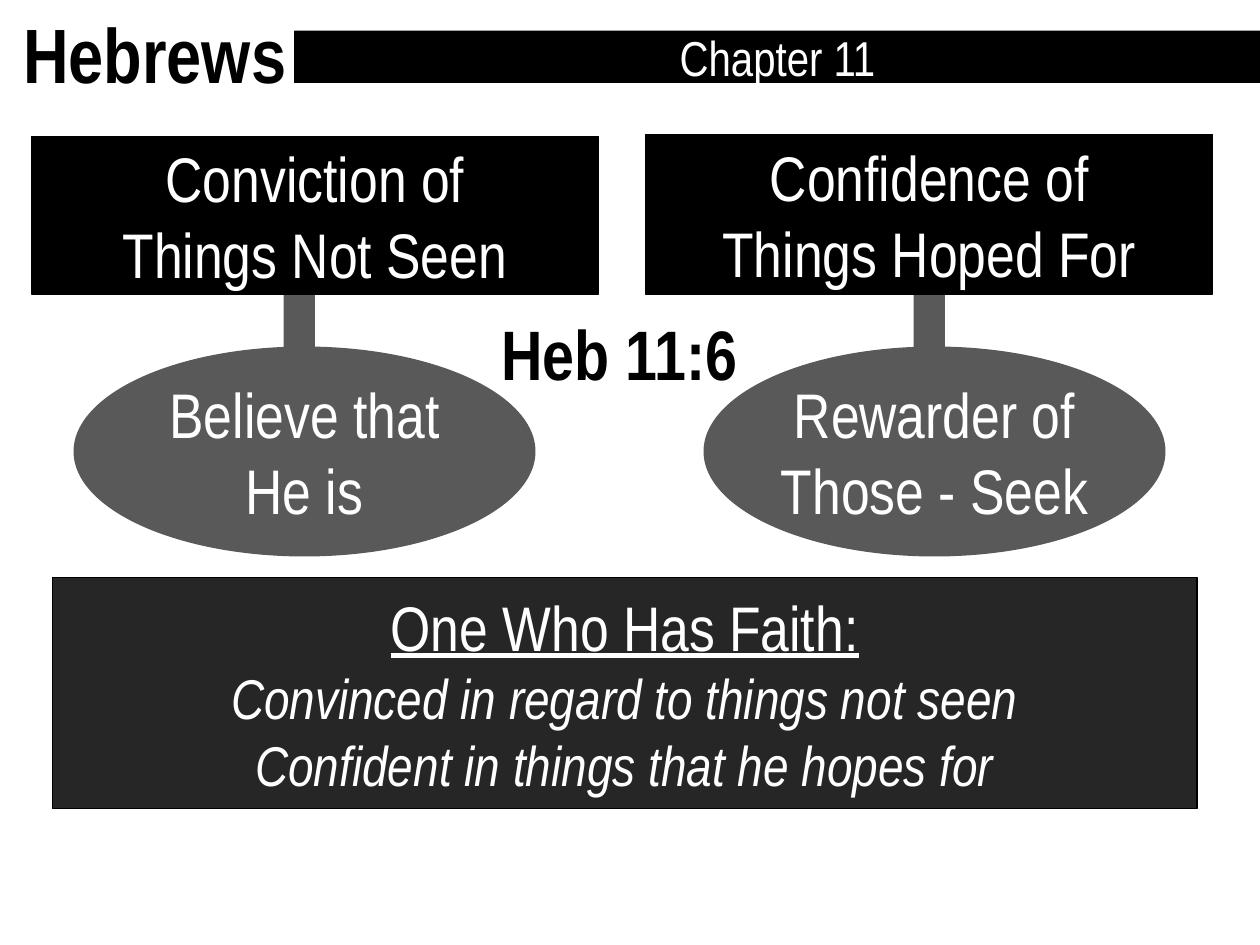
from dataclasses import dataclass

from pptx import Presentation
from pptx.dml.color import RGBColor
from pptx.enum import shapes, text
from pptx.util import Pt

RECT = shapes.MSO_SHAPE.RECTANGLE
OVAL = shapes.MSO_SHAPE.OVAL
LEFT, MID = text.PP_ALIGN.LEFT, text.PP_ALIGN.CENTER


@dataclass
class Theme:
    font: str = "Arial Narrow"
    black: str = "000000"
    white: str = "FFFFFF"
    gray: str = "595959"
    dark: str = "262626"
    title: int = 44
    verse: int = 40
    head: int = 36
    body: int = 32
    bar: int = 28


def write(para, words, size, color, face, align=MID, **marks):
    """Put words in a paragraph; marks are bold, italic or underline."""
    para.alignment = align
    run = para.add_run()
    run.text = words
    run.font.name, run.font.size = face, Pt(size)
    run.font.color.rgb = RGBColor.from_string(color)
    for mark, value in marks.items():
        setattr(run.font, mark, value)


class Deck:
    def __init__(self, theme):
        self.theme = theme
        self.show = Presentation()
        self.show.slide_width, self.show.slide_height = Pt(720), Pt(540)
        self.slide = self.show.slides.add_slide(self.show.slide_layouts[5])

    def fill(self, shape, lines, color, wrap=False, anchor=text.MSO_ANCHOR.MIDDLE):
        """Fill a frame with (words, size, marks) lines."""
        frame = shape.text_frame
        frame.auto_size = text.MSO_AUTO_SIZE.NONE
        frame.word_wrap, frame.vertical_anchor = wrap, anchor
        for i, (words, size, marks) in enumerate(lines):
            para = frame.add_paragraph() if i else frame.paragraphs[0]
            write(para, words, size, color, self.theme.font, **marks)

    def title(self, words, box):
        shape = self.slide.shapes.title
        shape.left, shape.top, shape.width, shape.height = map(Pt, box)
        self.fill(shape, [(words, self.theme.title, {"bold": True, "align": LEFT})],
                  self.theme.black, True, text.MSO_ANCHOR.TOP)

    def label(self, words, box):
        shape = self.slide.shapes.add_textbox(*map(Pt, box))
        self.fill(shape, [(words, self.theme.verse, {"bold": True})],
                  self.theme.black, True, text.MSO_ANCHOR.TOP)

    def block(self, kind, box, color, lines=(), edge=False, wrap=False, home=None):
        shape = (home or self.slide).shapes.add_shape(kind, *map(Pt, box))
        shape.shadow.inherit = False
        shape.fill.solid()
        shape.fill.fore_color.rgb = RGBColor.from_string(color)
        if edge:
            shape.line.color.rgb = RGBColor.from_string(self.theme.black)
            shape.line.width = Pt(0.75)
        else:
            shape.line.fill.background()
        if lines:
            self.fill(shape, lines, self.theme.white, wrap)

    def drop(self, left, lines):
        """Oval hung on a post, as one group."""
        group = self.slide.shapes.add_group_shape()
        self.block(RECT, (left + 120, 150, 18, 84), self.theme.gray, home=group)
        self.block(OVAL, (left, 198, 264, 120), self.theme.gray, lines, home=group)


def main():
    theme = Theme()
    deck = Deck(theme)

    def heads(*rows):
        return [(row, theme.head, {}) for row in rows]

    # Title and chapter bar
    deck.title("Hebrews", (6, 0, 715, 60.5))
    deck.block(RECT, (168, 17.5, 552.5, 30), theme.black,
               [("Chapter 11", theme.bar, {})], wrap=True)

    # Ovals, then the boxes that cover their posts
    deck.drop(402, heads("Rewarder of", "Those - Seek"))
    deck.drop(42, heads("Believe that", "He is"))
    deck.block(RECT, (18, 78, 324, 90), theme.black,
               heads("Conviction of", "Things Not Seen"), edge=True)
    deck.block(RECT, (369, 77, 324, 91), theme.black,
               heads("Confidence of", "Things Hoped For"), edge=True)

    # Verse
    deck.label("Heb 11:6", (234, 174, 240, 55.5))

    # Summary
    deck.block(RECT, (30, 330, 654, 132), theme.dark, [
        ("One Who Has Faith:", theme.head, {"underline": True}),
        ("Convinced in regard to things not seen", theme.body, {"italic": True}),
        ("Confident in things that he hopes for", theme.body, {"italic": True}),
    ], edge=True)

    deck.show.save("out.pptx")


if __name__ == "__main__":
    main()
